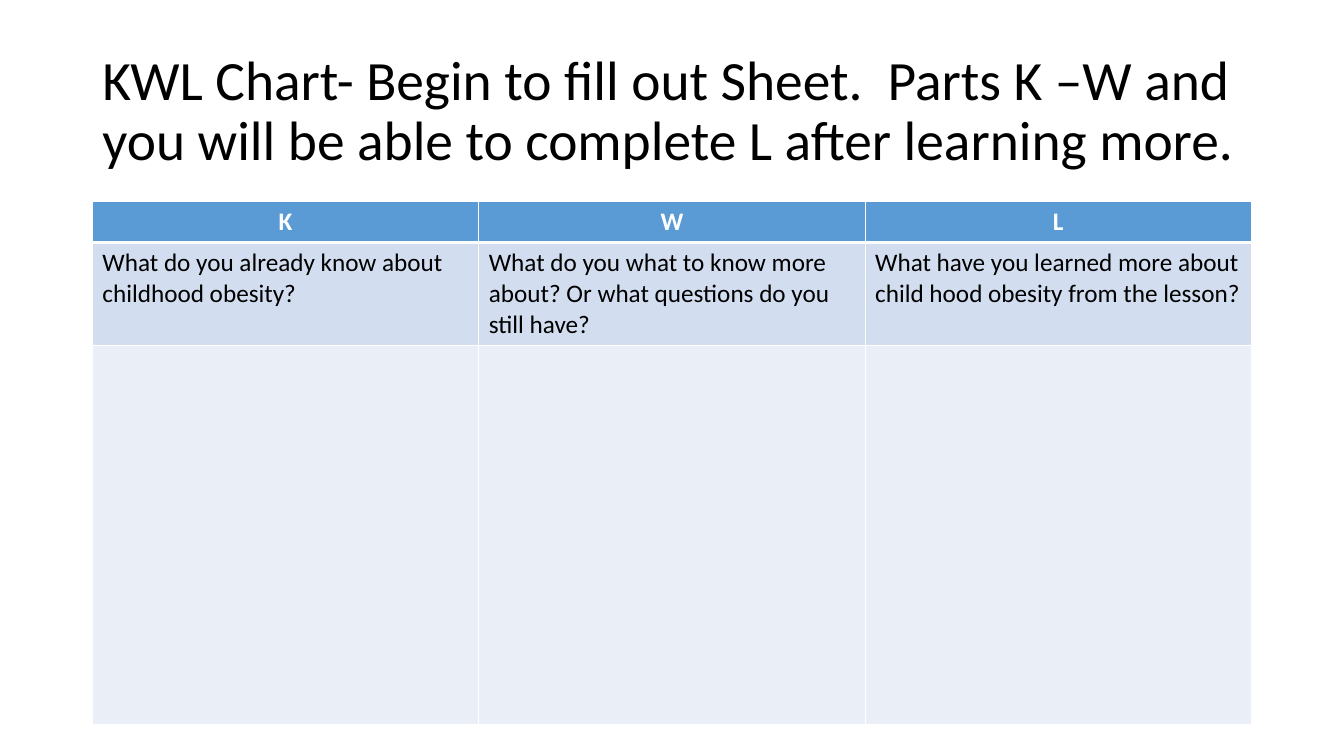
from lxml.etree import SubElement
from pptx import Presentation
from pptx.dml.color import RGBColor
from pptx.enum.text import MSO_ANCHOR as Anchor, MSO_AUTO_SIZE as AutoSize, PP_ALIGN as Align
from pptx.oxml.ns import qn
from pptx.util import Pt

PX = 9525  # EMU per px, 96 px to the inch
FONT = "Calibri"
BLACK = RGBColor(0x00, 0x00, 0x00)
WHITE = RGBColor(0xFF, 0xFF, 0xFF)
BLUE = RGBColor(0x5B, 0x9B, 0xD5)
LIGHT_BLUE = RGBColor(0xD2, 0xDE, 0xEF)
PALE_BLUE = RGBColor(0xEA, 0xEF, 0xF7)

TITLE = ("KWL Chart- Begin to fill out Sheet.  Parts K –W and you will be able "
         "to complete L after learning more.")
HEADINGS = ["K", "W", "L"]
QUESTIONS = [
    "What do you already know about childhood obesity?",
    "What do you what to know more about? Or what questions do you still have?",
    "What have you learned more about child hood obesity from the lesson?",
]
# Each row: texts, height in px, fill, text colour, bold, alignment
ROWS = [
    (HEADINGS, 39, BLUE, WHITE, True, Align.CENTER),
    (QUESTIONS, 98, LIGHT_BLUE, BLACK, False, Align.LEFT),
    ([""] * 3, 361, PALE_BLUE, BLACK, False, Align.LEFT),
]


def format_text(para, size, color, bold, align):
    para.alignment = align
    para.font.size = Pt(size)
    for span in para.runs:
        span.font.name = FONT
        span.font.size = Pt(size)
        span.font.bold = bold
        span.font.color.rgb = color


def add_border(cell, side, points):
    line = SubElement(cell._tc.get_or_add_tcPr(), qn(f"a:ln{side}"), w=str(Pt(points)))
    fill = SubElement(line, qn("a:solidFill"))
    SubElement(fill, qn("a:srgbClr"), val=str(WHITE))


def place_title(page, left, top, width, height):
    title = page.shapes.title
    title.left, title.top = left * PX, top * PX
    title.width, title.height = width * PX, height * PX
    frame = title.text_frame
    frame.text = TITLE
    frame.word_wrap = True
    frame.auto_size = AutoSize.NONE
    frame.vertical_anchor = Anchor.MIDDLE
    para = frame.paragraphs[0]
    para.line_spacing = 0.9
    format_text(para, 39.6, BLACK, False, Align.LEFT)


def place_kwl_table(page, left, top, width):
    height = sum(row[1] for row in ROWS)
    table = page.shapes.add_table(len(ROWS), len(HEADINGS), left * PX, top * PX,
                                  width * PX, height * PX).table
    for r, (texts, row_height, fill, color, bold, align) in enumerate(ROWS):
        table.rows[r].height = row_height * PX
        for c, text in enumerate(texts):
            cell = table.cell(r, c)
            cell.text = text
            format_text(cell.text_frame.paragraphs[0], 18, color, bold, align)
            # A thick rule parts the heading row from the questions
            borders = {"L": 1, "R": 1, "T": 3 if r == 1 else 1, "B": 3 if r == 0 else 1}
            for side, points in borders.items():
                add_border(cell, side, points)
            cell.fill.solid()
            cell.fill.fore_color.rgb = fill


def main():
    deck = Presentation()
    deck.slide_width, deck.slide_height = 1280 * PX, 720 * PX
    page = deck.slides.add_slide(deck.slide_layouts.get_by_name("Title Only"))
    page.background.fill.solid()
    page.background.fill.fore_color.rgb = WHITE
    place_title(page, 88, 38, 1104, 139)
    place_kwl_table(page, 88, 192, 1104)
    deck.save("out.pptx")


if __name__ == "__main__":
    main()
